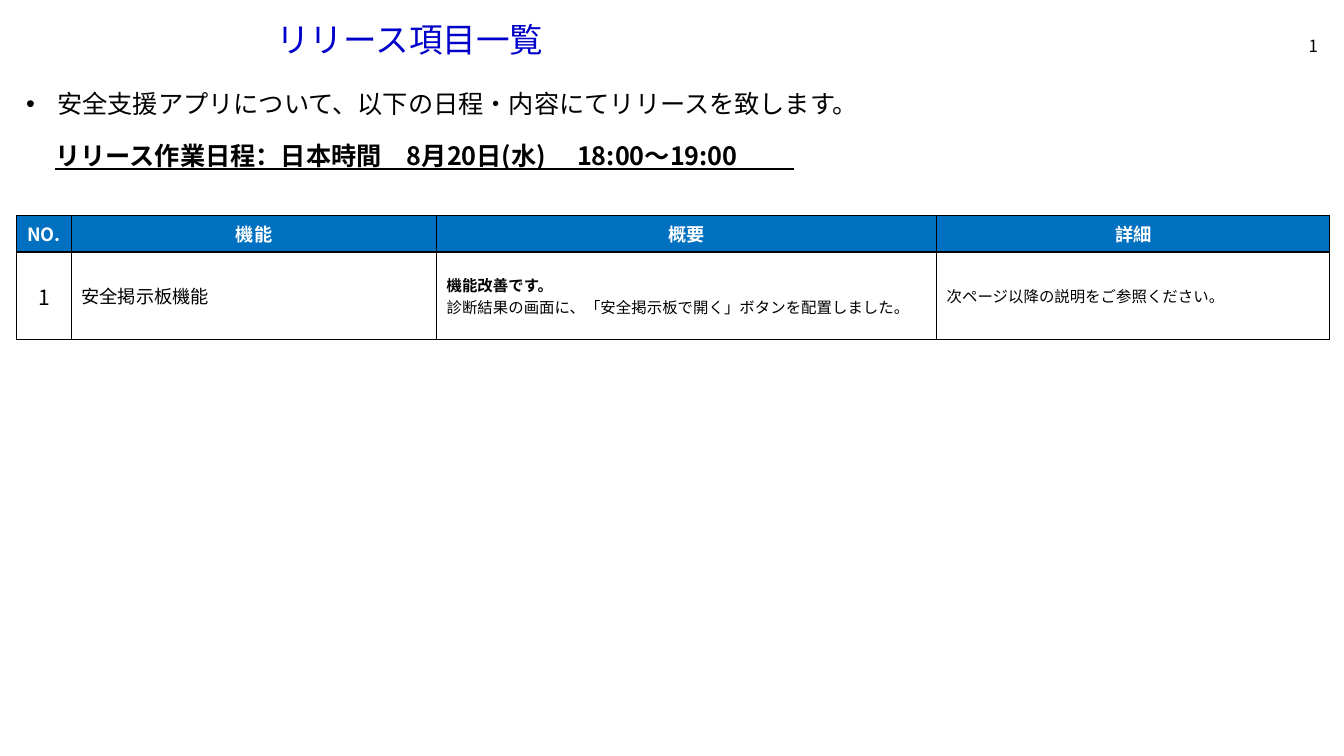
from dataclasses import dataclass

from lxml.etree import SubElement
from pptx import Presentation
from pptx.dml.color import RGBColor
from pptx.enum.text import MSO_ANCHOR, MSO_AUTO_SIZE, PP_ALIGN
from pptx.oxml.ns import qn
from pptx.util import Inches, Pt

FONT = "Noto Sans CJK JP"
BLACK, WHITE = "000000", "FFFFFF"
HEADER_BLUE, TITLE_BLUE = "0070C0", "0000CA"
COLUMN_WIDTHS = (0.55, 3.62, 4.96, 3.9)
ROW_HEIGHTS = (0.32, 0.87)


@dataclass(frozen=True)
class Line:
    text: str
    size: float
    bold: bool = False
    color: str = BLACK
    align: PP_ALIGN = PP_ALIGN.LEFT


@dataclass(frozen=True)
class Cell:
    fill: str
    lines: tuple[Line, ...]


def rgb(color: str) -> RGBColor:
    return RGBColor.from_string(color)


def write(para, text: str, *, size: float, bold: bool = False, color: str = BLACK,
          align: PP_ALIGN = PP_ALIGN.LEFT, underline: bool = False):
    """Add one formatted span to a paragraph."""
    para.alignment = align
    span = para.add_run()
    span.text = text
    font = span.font
    font.size, font.bold, font.name = Pt(size), bold, FONT
    font.underline = underline
    font.color.rgb = rgb(color)
    SubElement(font._element, qn("a:ea"), typeface=FONT)
    return span


def place(box, left: float, top: float, width: float, height: float):
    """Position a text shape and return its first paragraph."""
    box.left, box.top = Inches(left), Inches(top)
    box.width, box.height = Inches(width), Inches(height)
    frame = box.text_frame
    frame.word_wrap = True
    frame.auto_size = MSO_AUTO_SIZE.NONE
    frame.vertical_anchor = MSO_ANCHOR.MIDDLE
    frame.margin_left = frame.margin_right = Inches(0.1)
    frame.margin_top = frame.margin_bottom = 0
    return frame.paragraphs[0]


def add_text_box(page, left: float, top: float, width: float, height: float):
    return place(page.shapes.add_textbox(0, 0, 0, 0), left, top, width, height)


def add_bullet(para, indent: float) -> None:
    properties = para._p.get_or_add_pPr()
    properties.set("marL", str(Inches(indent)))
    properties.set("indent", str(-Inches(indent)))
    SubElement(properties, qn("a:buFont"), typeface="Arial")
    SubElement(properties, qn("a:buChar"), char="•")


def make_slide_number(para, span) -> None:
    """Turn a span into a slide number field."""
    field = SubElement(para._p, qn("a:fld"), type="slidenum",
                       id="{B6F15528-21DE-4FAA-801E-634DDDAF4B2B}")
    field.extend(list(span._r))
    para._p.remove(span._r)


def add_borders(cell) -> None:
    properties = cell._tc.get_or_add_tcPr()
    for position, side in enumerate(("lnL", "lnR", "lnT", "lnB")):
        border = SubElement(properties, qn(f"a:{side}"), w=str(Pt(1)))
        fill = SubElement(border, qn("a:solidFill"))
        SubElement(fill, qn("a:srgbClr"), val=BLACK)
        properties.insert(position, border)


def add_release_table(page, rows: tuple[tuple[Cell, ...], ...]) -> None:
    table = page.shapes.add_table(
        len(rows), len(COLUMN_WIDTHS), Inches(0.16), Inches(2.14),
        Inches(sum(COLUMN_WIDTHS)), Inches(sum(ROW_HEIGHTS))).table
    for column, width in zip(table.columns, COLUMN_WIDTHS):
        column.width = Inches(width)
    for row, height in zip(table.rows, ROW_HEIGHTS):
        row.height = Inches(height)
    for row, contents in zip(table.rows, rows):
        for cell, content in zip(row.cells, contents):
            cell.vertical_anchor = MSO_ANCHOR.MIDDLE
            cell.margin_left = cell.margin_right = Inches(0.1)
            cell.margin_top = cell.margin_bottom = Inches(0.05)
            cell.fill.solid()
            cell.fill.fore_color.rgb = rgb(content.fill)
            add_borders(cell)
            for index, line in enumerate(content.lines):
                frame = cell.text_frame
                para = frame.add_paragraph() if index else frame.paragraphs[0]
                write(para, line.text, size=line.size, bold=line.bold,
                      color=line.color, align=line.align)


HEADER_ROW = tuple(
    Cell(HEADER_BLUE, (Line(label, 13, True, WHITE, PP_ALIGN.CENTER),))
    for label in ("NO.", "機能", "概要", "詳細"))
RELEASE_ROW = (
    Cell(WHITE, (Line("1", 15, align=PP_ALIGN.CENTER),)),
    Cell(WHITE, (Line("安全掲示板機能", 13),)),
    Cell(WHITE, (
        Line("機能改善です。", 11, bold=True),
        Line("診断結果の画面に、「安全掲示板で開く」ボタンを配置しました。", 11))),
    Cell(WHITE, (Line("次ページ以降の説明をご参照ください。", 11),)),
)


def main() -> None:
    deck = Presentation()
    deck.slide_width, deck.slide_height = Inches(13.33), Inches(7.5)
    page = deck.slides.add_slide(deck.slide_layouts[5])

    # Title and slide number
    title = place(page.shapes.title, 2.64, 0.2, 9.55, 0.42)
    title.line_spacing = 0.9
    write(title, "リリース項目一覧", size=24, color=TITLE_BLUE)
    number = add_text_box(page, 12.48, 0.3, 0.69, 0.3)
    make_slide_number(number, write(number, "1", size=12, align=PP_ALIGN.RIGHT))

    # Release table
    add_release_table(page, (HEADER_ROW, RELEASE_ROW))

    # Announcement and schedule
    notice = add_text_box(page, 0.16, 0.83, 12.88, 0.4)
    add_bullet(notice, 0.31)
    write(notice, "安全支援アプリについて、以下の日程・内容にてリリースを致します。", size=18)
    schedule = add_text_box(page, 0.45, 1.34, 8.55, 0.4)
    write(schedule, "リリース作業日程：日本時間　8月20日(水) 　18:00～19:00　 　",
          size=18, bold=True, underline=True)

    deck.save("out.pptx")


if __name__ == "__main__":
    main()
